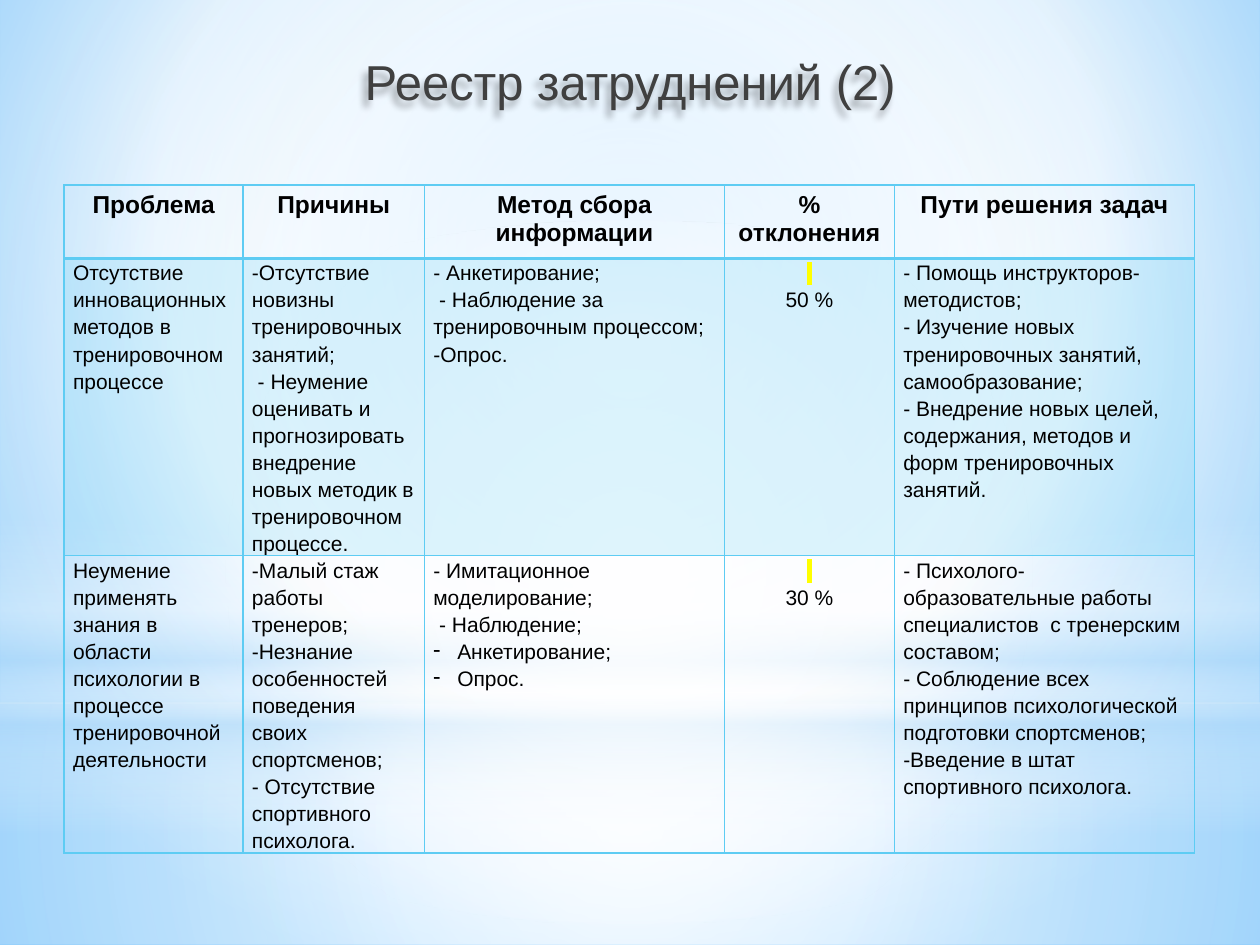
"""Builds the slide with the register of difficulties."""
from lxml import etree
from pptx import Presentation
from pptx.dml.color import RGBColor
from pptx.enum.shapes import MSO_SHAPE
from pptx.enum.text import MSO_ANCHOR, MSO_AUTO_SIZE, PP_ALIGN
from pptx.oxml.ns import qn
from pptx.util import Inches, Pt

RECT, OVAL = MSO_SHAPE.RECTANGLE, MSO_SHAPE.OVAL
LEFT, CENTER = PP_ALIGN.LEFT, PP_ALIGN.CENTER
TOP, FIXED = MSO_ANCHOR.TOP, MSO_AUTO_SIZE.NONE
MIDDLE = (50, 50, 50, 50)
ACCENT, YELLOW = "5ECCF3", "FFFF00"
HEAD = {"size": Pt(14), "bold": True}
BODY = {"size": Pt(12), "bold": False}
HEAD_SPACE = {"alignment": CENTER}
BODY_SPACE = {"alignment": LEFT, "line_spacing": 1.15}
BODY_INSETS = {"margin_left": Inches(0.07), "margin_right": Inches(0.07),
               "margin_top": 0, "margin_bottom": 0}

BACKDROP = [(0, "9ED5FF", 100), (60, "FFFFFF", 100), (100, "5BB9FF", 100)]
LAYERS = [
    (RECT, (0, 5.58, 10, 1.92), MIDDLE,
     [(0, "FFFFFF", 91), (37, "FFFFFF", 76), (100, "B4DCFA", 79)]),
    (RECT, (0, 0, 10, 5.58), MIDDLE,
     [(0, "FFFFFF", 89), (48, "FFFFFF", 62), (100, "B4DCFA", 79)]),
    (RECT, (0, 4.12, 10, 2.5), None,
     [(0, "FFFFFF", 0), (29, "FFFFFF", 30), (45, "B4DCFA", 40),
      (55, "FFFFFF", 26), (65, "B4DCFA", 60), (100, "FFFFFF", 0)]),
    (OVAL, (0, 1.75, 10, 5.58), MIDDLE,
     [(0, "FFFFFF", 100), (56, "FFFFFF", 0)]),
]
COLUMNS = [1.42, 1.44, 2.38, 1.35, 2.38]
ROWS = [0.58, 2.36, 2.36]
CELLS = [
    [["Проблема"], ["Причины"], ["Метод сбора информации"],
     ["%", "отклонения"], ["Пути решения задач"]],
    [["Отсутствие инновационных методов в тренировочном процессе"],
     ["-Отсутствие новизны тренировочных занятий;",
      " - Неумение оценивать и прогнозировать внедрение новых методик в "
      "тренировочном процессе."],
     ["- Анкетирование;",
      " - Наблюдение за тренировочным процессом; -Опрос."],
     [" ", "50 %"],
     ["- Помощь инструкторов-методистов;",
      "- Изучение новых тренировочных занятий, самообразование;",
      "- Внедрение новых целей, содержания, методов и форм тренировочных "
      "занятий."]],
    [["Неумение применять знания в области психологии в процессе "
      "тренировочной деятельности"],
     ["-Малый стаж работы тренеров;",
      "-Незнание особенностей поведения своих спортсменов;",
      "- Отсутствие спортивного психолога."],
     ["- Имитационное моделирование;", " - Наблюдение;",
      "• Анкетирование;", "• Опрос."],
     [" ", "30 %"],
     ["- Психолого-образовательные работы специалистов  с тренерским "
      "составом;",
      "- Соблюдение всех принципов психологической подготовки спортсменов;",
      "-Введение в штат спортивного психолога."]],
]


def color(value):
    return RGBColor.from_string(value)


def apply(target, values):
    for name, value in values.items():
        setattr(target, name, value)


def add_node(parent, tag, **attributes):
    return etree.SubElement(parent, qn(tag), attributes)


def percent(value):
    return str(value * 1000)


class SlideBuilder:
    def __init__(self, deck, font="Arial"):
        self.page = deck.slides.add_slide(deck.slide_layouts[5])
        self.font = font

    def paint(self, holder, stops, focus):
        gradient = next(holder.iter(qn("a:gradFill")))
        for child in list(gradient):
            gradient.remove(child)
        stop_list = add_node(gradient, "a:gsLst")
        for position, value, alpha in stops:
            stop = add_node(stop_list, "a:gs", pos=percent(position))
            tint = add_node(stop, "a:srgbClr", val=value)
            add_node(tint, "a:alpha", val=percent(alpha))
        if focus:
            circle = add_node(gradient, "a:path", path="circle")
            add_node(circle, "a:fillToRect",
                     **dict(zip("ltrb", map(percent, focus))))
        else:
            add_node(gradient, "a:lin", ang="5400000", scaled="0")

    def background(self, stops, focus):
        self.page.background.fill.gradient()
        self.paint(self.page.element, stops, focus)

    def layer(self, kind, place, focus, stops):
        shape = self.page.shapes.add_shape(kind, *map(Inches, place))
        shape.shadow.inherit = False
        shape.line.fill.background()
        shape.fill.gradient()
        self.paint(shape.element.spPr, stops, focus)

    def add_text(self, para, text, style, tint="000000"):
        span = para.add_run()
        span.text = text
        apply(span.font, {"name": self.font, **style})
        span.font.color.rgb = color(tint)
        return span

    def title(self, text, place):
        box = self.page.shapes.title
        box.element.getparent().append(box.element)
        apply(box, dict(zip(("left", "top", "width", "height"),
                            map(Inches, place))))
        apply(box.text_frame, {"vertical_anchor": TOP, "word_wrap": True,
                               "auto_size": FIXED})
        para = box.text_frame.paragraphs[0]
        apply(para, {"alignment": CENTER, "space_before": Pt(5.6),
                     "space_after": Pt(3)})
        self.add_text(para, text, {"size": Pt(28), "bold": False}, "404040")
        effects = add_node(box.element.spPr, "a:effectLst")
        shadow = add_node(effects, "a:outerShdw", blurRad=str(Pt(4)),
                          dist=str(Pt(5)), dir="7200000")
        tint = add_node(shadow, "a:srgbClr", val="000000")
        add_node(tint, "a:alpha", val=percent(35))

    def borders(self, cell, bottom):
        properties = cell._tc.get_or_add_tcPr()
        for side, width in zip("LRTB", (1, 1, 1, bottom)):
            line = add_node(properties, f"a:ln{side}", w=str(Pt(width)))
            add_node(add_node(line, "a:solidFill"), "a:srgbClr", val=ACCENT)

    def bullet(self, para):
        properties = para._p.get_or_add_pPr()
        indent = Inches(0.19)
        properties.set("marL", str(indent))
        properties.set("indent", str(-indent))
        add_node(properties, "a:buChar", char="-")

    def highlight(self, span):
        mark = etree.Element(qn("a:highlight"))
        add_node(mark, "a:srgbClr", val=YELLOW)
        span.font._element.find(qn("a:solidFill")).addnext(mark)

    def cell(self, cell, texts, style, spacing):
        frame = cell.text_frame
        for index, text in enumerate(texts):
            para = frame.add_paragraph() if index else frame.paragraphs[0]
            apply(para, spacing)
            if text.startswith("• "):
                self.bullet(para)
            span = self.add_text(para, text.removeprefix("• "), style)
            if text.isspace():
                self.highlight(span)

    def table(self, left, top):
        table = self.page.shapes.add_table(
            len(ROWS), len(COLUMNS), Inches(left), Inches(top),
            Inches(sum(COLUMNS)), Inches(sum(ROWS))).table
        apply(table, {"first_row": False, "horz_banding": False})
        for column, width in zip(table.columns, COLUMNS):
            column.width = Inches(width)
        for row_index, (row, height) in enumerate(zip(table.rows, ROWS)):
            row.height = Inches(height)
            for index, cell in enumerate(row.cells):
                texts = CELLS[row_index][index]
                self.borders(cell, 1 if row_index else 2)
                if row_index:
                    apply(cell, BODY_INSETS)
                    align = CENTER if index == 3 else LEFT
                    self.cell(cell, texts, BODY,
                              {**BODY_SPACE, "alignment": align})
                else:
                    self.cell(cell, texts, HEAD, HEAD_SPACE)
                if row_index == 1:
                    cell.fill.solid()
                    cell.fill.fore_color.rgb = color(ACCENT)
                    tint = cell._tc.tcPr.find(
                        f"{qn('a:solidFill')}/{qn('a:srgbClr')}")
                    add_node(tint, "a:alpha", val=percent(20))
                else:
                    cell.fill.background()


def main():
    deck = Presentation()
    deck.slide_width, deck.slide_height = Inches(10), Inches(7.5)
    builder = SlideBuilder(deck)
    builder.background(BACKDROP, (20, 10, 20, 60))
    for layer in LAYERS:
        builder.layer(*layer)
    builder.title("Реестр затруднений (2)", (0.75, 0.36, 8.5, 4.17))
    builder.table(0.51, 1.47)
    deck.save("out.pptx")


if __name__ == "__main__":
    main()
